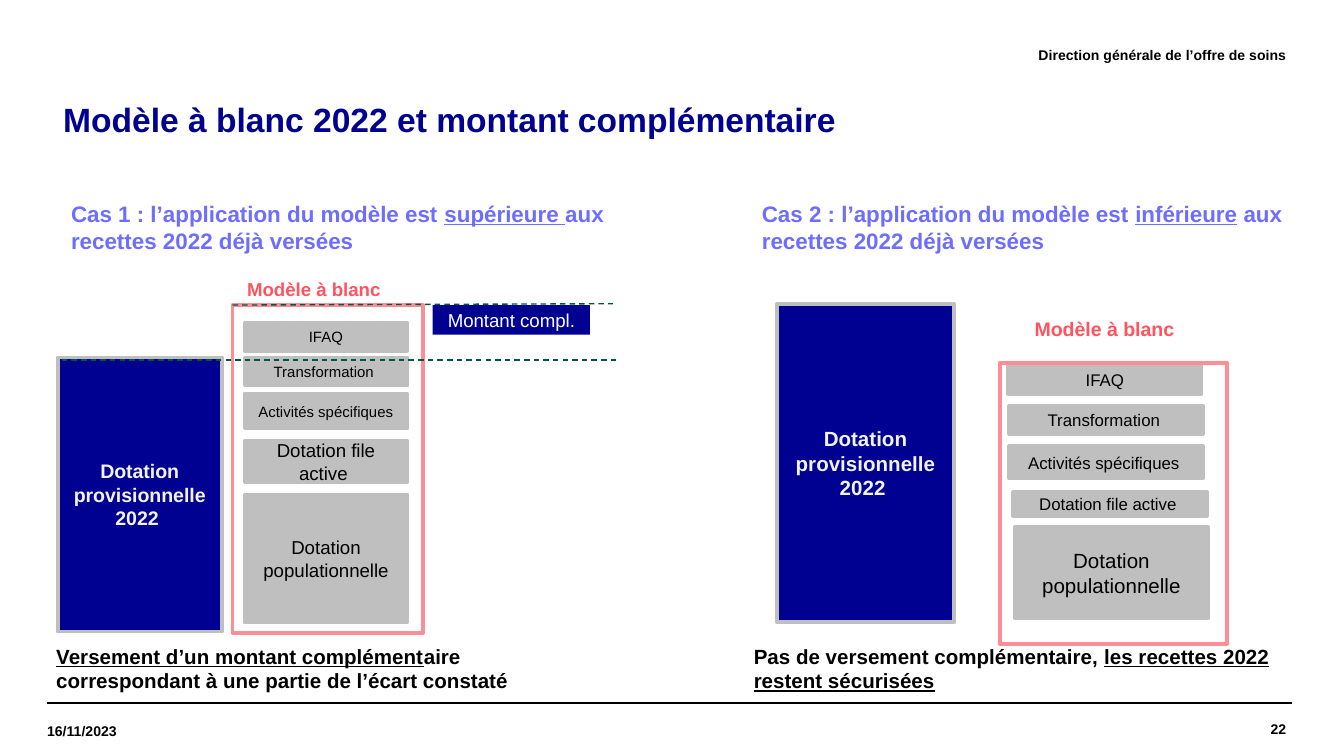
import dataclasses

import lxml.etree
import pptx
import pptx.dml.color
import pptx.enum.dml
import pptx.enum.shapes
import pptx.enum.text
import pptx.oxml.ns
import pptx.util

Inches = pptx.util.Inches
Pt = pptx.util.Pt
ALIGN = pptx.enum.text.PP_ALIGN
MIDDLE = pptx.enum.text.MSO_ANCHOR.MIDDLE
TOP = pptx.enum.text.MSO_ANCHOR.TOP


@dataclasses.dataclass(frozen=True)
class Theme:
    font: str = "Arial"
    black: str = "000000"
    white: str = "FFFFFF"
    navy: str = "000091"
    violet: str = "6D6DFF"
    grey: str = "BFBFBF"
    pale: str = "F2F2F2"
    frame: str = "FF8D95"
    coral: str = "FF545F"
    green: str = "005640"
    title: float = 18
    heading: float = 12
    conclusion: float = 11
    extra: float = 10
    running: float = 7.5
    border: float = 2
    rule: float = 0.8
    dash: float = 0.75


THEME = Theme()

CASES = [
    {
        "box": (0.32, 1.44),
        "heading": ((0.11, 0, 4.31, 0.5), [
            ("Cas 1 : l’application du modèle est ", False),
            ("supérieure ", True),
            ("aux recettes 2022 déjà versées", False)]),
        "conclusion": ((0, 3.3, 4.31, 0.47), [
            ("Versement d’un montant complément", True),
            ("aire correspondant à une partie de l’écart constaté", False)]),
        "provision": ((0.11, 1.22, 1.22, 2.04), 10.5),
        "model": (1.41, 0.83, 1.42, 2.44),
        "model_label": ((1.42, 0.58, 1.21, 0.27), 10),
        "component_width": 1.21,
        "components": [
            ("Dotation populationnelle", 1.5, 2.24, 0.95, 10),
            ("Dotation file active ", 1.5, 1.84, 0.31, 10),
            ("Activités spécifiques ", 1.5, 1.49, 0.26, 8),
            ("Transformation ", 1.5, 1.22, 0.21, 8),
            ("IFAQ", 1.5, 0.96, 0.21, 8)],
    },
    {
        "box": (5.51, 1.44),
        "heading": ((0.06, 0, 4.08, 0.5), [
            ("Cas 2 : l’application du modèle est ", False),
            ("inférieure", True),
            (" aux recettes 2022 déjà versées", False)]),
        "conclusion": ((0, 3.3, 4.29, 0.47), [
            ("Pas de versement complémentaire, ", False),
            ("les recettes 2022 restent sécurisées", True)]),
        "provision": ((0.27, 0.82, 1.32, 2.37), 11),
        "model": (1.93, 1.26, 1.69, 2.09),
        "model_label": ((2.09, 0.87, 2.52, 0.29), 10.5),
        "component_width": 1.44,
        "components": [
            ("Dotation populationnelle", 2.04, 2.48, 0.68, 11),
            ("Dotation file active ", 2.03, 2.22, 0.18, 9),
            ("Activités spécifiques ", 2, 1.88, 0.24, 9),
            ("Transformation ", 2, 1.58, 0.21, 9),
            ("IFAQ", 1.99, 1.28, 0.21, 9)],
    },
]


def rgb(value):
    return pptx.dml.color.RGBColor.from_string(value)


def apply_format(target, values):
    for name, value in values.items():
        setattr(target, name, value)


def within(box, area):
    left, top, width, height = area
    return [Inches(v) for v in (box[0] + left, box[1] + top, width, height)]


def write(holder, segments, size, color, bold=True, align=ALIGN.LEFT, anchor=TOP, inset=None):
    frame = holder.text_frame
    apply_format(frame, {"word_wrap": True, "vertical_anchor": anchor})
    if inset is not None:
        sides = ("margin_left", "margin_top", "margin_right", "margin_bottom")
        apply_format(frame, dict.fromkeys(sides, Inches(inset)))
    paragraph = frame.paragraphs[0]
    paragraph.alignment = align
    for text, underlined in segments:
        run = paragraph.add_run()
        run.text = text
        apply_format(run.font, {"name": THEME.font, "size": Pt(size),
                                "bold": bold, "underline": underlined})
        run.font.color.rgb = rgb(color)


def add_text(slide, box, area, segments, size, color, **layout):
    write(slide.shapes.add_textbox(*within(box, area)), segments, size, color, **layout)


def add_block(slide, box, area, fill=None, border=None):
    block = slide.shapes.add_shape(pptx.enum.shapes.MSO_SHAPE.RECTANGLE, *within(box, area))
    block.shadow.inherit = False
    if fill:
        block.fill.solid()
        block.fill.fore_color.rgb = rgb(fill)
    else:
        block.fill.background()
    if border:
        block.line.color.rgb = rgb(border)
        block.line.width = Pt(THEME.border)
    else:
        block.line.fill.background()
    return block


def add_label_block(slide, box, area, text, size, color, fill, border=None, bold=False):
    block = add_block(slide, box, area, fill, border)
    write(block, [(text, False)], size, color, bold, ALIGN.CENTER, MIDDLE)


def add_line(slide, box, start, end, color, width, dash=None):
    points = [Inches(box[i] + point[i]) for point in (start, end) for i in (0, 1)]
    line = slide.shapes.add_connector(pptx.enum.shapes.MSO_CONNECTOR.STRAIGHT, *points)
    line.line.color.rgb = rgb(color)
    apply_format(line.line, {"width": Pt(width), "dash_style": dash})
    lxml.etree.SubElement(line._element.spPr, pptx.oxml.ns.qn("a:effectLst"))


def draw_page_frame(slide, box):
    for left in (0.35, 0.39):
        add_line(slide, box, (left, 5.23), (left + 9.22, 5.23), THEME.black, THEME.rule)
    for text, area, align in [
        ("22", (8.09, 5.23, 1.48, 0.39), ALIGN.RIGHT),
        ("16/11/2023", (0.35, 5.25, 1.32, 0.38), ALIGN.LEFT),
        ("Direction générale de l’offre de soins", (3.14, 0.21, 6.43, 0.39), ALIGN.RIGHT),
    ]:
        add_text(slide, box, area, [(text, False)], THEME.running, THEME.black,
                 align=align, anchor=MIDDLE, inset=0)


def draw_title(slide, box):
    title = slide.shapes.title
    places = ("left", "top", "width", "height")
    apply_format(title, dict(zip(places, within(box, (0.37, 0.61, 9.2, 0.59)))))
    write(title, [("Modèle à blanc 2022 et montant complémentaire", False)],
          THEME.title, THEME.navy, anchor=MIDDLE)
    title.text_frame.auto_size = pptx.enum.text.MSO_AUTO_SIZE.NONE
    apply_format(title.text_frame.paragraphs[0], {"line_spacing": 0.9, "space_before": Pt(0)})


def draw_case(slide, box, case):
    area, size = case["provision"]
    add_label_block(slide, box, area, "Dotation provisionnelle 2022 ", size,
                    THEME.pale, THEME.navy, THEME.grey, bold=True)
    for text, left, top, height, size in case["components"]:
        add_label_block(slide, box, (left, top, case["component_width"], height),
                        text, size, THEME.black, THEME.grey, THEME.grey)
    add_block(slide, box, case["model"], border=THEME.frame)
    for part, size, color in [("heading", THEME.heading, THEME.violet),
                              ("conclusion", THEME.conclusion, THEME.black)]:
        area, segments = case[part]
        add_text(slide, box, area, segments, size, color)
    area, size = case["model_label"]
    add_text(slide, box, area, [("Modèle à blanc", False)], size, THEME.coral)


def draw_extra_amount(slide, box):
    add_label_block(slide, box, (2.9, 0.83, 1.17, 0.22), "Montant compl. ",
                    THEME.extra, THEME.white, THEME.navy)
    for start, end in [((0.14, 1.24), (4.27, 1.24)), ((1.41, 0.83), (4.24, 0.82))]:
        add_line(slide, box, start, end, THEME.green, THEME.dash,
                 pptx.enum.dml.MSO_LINE.DASH)


def main():
    deck = pptx.Presentation()
    width = Inches(10)
    apply_format(deck, {"slide_width": width, "slide_height": width * 9 // 16})
    slide = deck.slides.add_slide(deck.slide_layouts[5])
    page = (0, 0)
    draw_page_frame(slide, page)
    draw_title(slide, page)
    for case in CASES:
        draw_case(slide, case["box"], case)
    draw_extra_amount(slide, CASES[0]["box"])
    deck.save("out.pptx")


if __name__ == "__main__":
    main()
